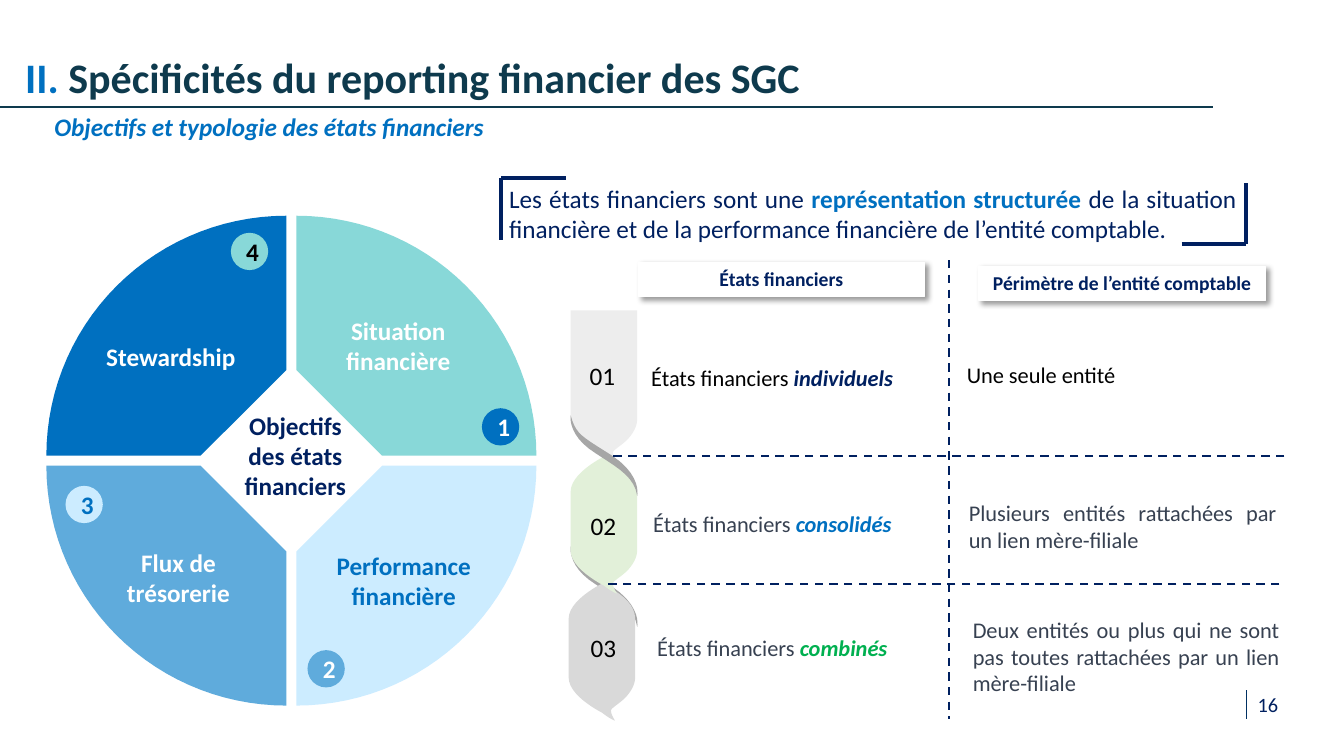
import math

from lxml import etree
from pptx import Presentation
from pptx.dml.color import RGBColor
from pptx.enum.dml import MSO_LINE
from pptx.enum.shapes import MSO_CONNECTOR, MSO_SHAPE
from pptx.enum.text import MSO_ANCHOR, MSO_AUTO_SIZE, PP_ALIGN
from pptx.oxml import parse_xml
from pptx.oxml.ns import qn
from pptx.util import Inches, Pt

LEFT, CENTER, JUSTIFY = PP_ALIGN.LEFT, PP_ALIGN.CENTER, PP_ALIGN.JUSTIFY
TOP, MIDDLE = MSO_ANCHOR.TOP, MSO_ANCHOR.MIDDLE
DASH = MSO_LINE.DASH
FONT = "Calibri"

WHITE = RGBColor(0xFF, 0xFF, 0xFF)
BLACK = RGBColor(0x00, 0x00, 0x00)
NAVY = RGBColor(0x00, 0x20, 0x60)
PAGE_RULE = RGBColor(0x00, 0x30, 0x62)
PETROL = RGBColor(0x0E, 0x3A, 0x4D)
BLUE = RGBColor(0x00, 0x70, 0xC0)
SKY = RGBColor(0x5F, 0xAB, 0xDC)
PALE_BLUE = RGBColor(0xCC, 0xEC, 0xFF)
TEAL = RGBColor(0x88, 0xD8, 0xD8)
SLATE = RGBColor(0x37, 0x41, 0x51)
GREEN = RGBColor(0x00, 0xB0, 0x50)
PALE_GREEN = RGBColor(0xE2, 0xF0, 0xD9)
LIGHT_GREY = RGBColor(0xED, 0xED, 0xED)
MID_GREY = RGBColor(0xD9, 0xD9, 0xD9)
FOLD_GREY = RGBColor(0xA6, 0xA6, 0xA6)

SHADOW = """<a:effectLst xmlns:a="http://schemas.openxmlformats.org/drawingml/2006/main">
<a:outerShdw blurRad="50800" dist="38100" dir="2700000" algn="tl" rotWithShape="0">
<a:srgbClr val="000000"><a:alpha val="40000"/></a:srgbClr></a:outerShdw></a:effectLst>"""


def write(holder, *spans, size=18, align=LEFT, anchor=TOP):
    """Fill a shape with one paragraph of (text, colour, style) spans; style holds b and/or i."""
    frame = holder.text_frame
    frame.word_wrap = True
    frame.vertical_anchor = anchor
    para = frame.paragraphs[0]
    para.alignment = align
    for text, color, style in spans:
        span = para.add_run()
        span.text = text
        span.font.name = FONT
        span.font.size = Pt(size)
        span.font.color.rgb = color
        span.font.bold = "b" in style
        span.font.italic = "i" in style
    return para


def add_outline(points, color):
    """Draw a closed, filled outline through points given in inches."""
    corners = [(Inches(x), Inches(y)) for x, y in points]
    builder = page.shapes.build_freeform(*corners[0])
    builder.add_line_segments(corners[1:], close=True)
    shape = builder.convert_to_shape()
    shape.shadow.inherit = False
    shape.fill.solid()
    shape.fill.fore_color.rgb = color
    shape.line.fill.background()


deck = Presentation()
deck.slide_width, deck.slide_height = Inches(13.33), Inches(7.5)
page = deck.slides.add_slide(deck.slide_layouts[5])

# Title
title = page.shapes.title
title.left, title.top, title.width, title.height = map(Inches, (0.15, 0.51, 11.5, 0.56))
title.text_frame.auto_size = MSO_AUTO_SIZE.NONE
heading = write(title, ("II. ", BLUE, "b"),
                ("Spécificités du reporting financier des SGC", PETROL, "b"),
                size=30, anchor=MIDDLE)
heading.line_spacing = 0.9

# Wheel of objectives
WHEEL_X, WHEEL_Y, HALF_GAP, RADIUS, HUB = 2.89, 4.57, 0.05, 2.38, 0.85
for side_x, side_y, color in [(1, -1, TEAL), (1, 1, PALE_BLUE), (-1, 1, SKY), (-1, -1, BLUE)]:
    corner_x = WHEEL_X + side_x * HALF_GAP
    corner_y = WHEEL_Y + side_y * HALF_GAP
    sector = [(corner_x + side_x * RADIUS * math.sin(math.radians(angle)),
               corner_y + side_y * RADIUS * math.cos(math.radians(angle)))
              for angle in range(0, 91, 3)]
    sector += [(corner_x + side_x * HUB, corner_y), (corner_x, corner_y + side_y * HUB)]
    add_outline(sector, color)

badges = [
    ("1", 4.78, 4.05, BLUE, WHITE),
    ("3", 0.65, 4.82, PALE_BLUE, BLUE),
    ("2", 3.05, 6.45, SKY, WHITE),
    ("4", 2.29, 2.31, TEAL, BLACK),
]
for number, left, top, color, ink in badges:
    badge = page.shapes.add_shape(MSO_SHAPE.OVAL, Inches(left), Inches(top),
                                  Inches(0.37), Inches(0.37))
    badge.shadow.inherit = False
    badge.fill.solid()
    badge.fill.fore_color.rgb = color
    badge.line.fill.background()
    write(badge, (number, ink, "b"), align=CENTER, anchor=MIDDLE)

# Numbered ribbon: curves as (control, control, end), straight edges as (end,)
TAIL = [((0, 0.14), (0.18, 0.27), (0.33, 0.35)), ((0.37, 0.38), (0.41, 0.41), (0.46, 0.43)),
        ((0.46, 0.43), (0.42, 0.37), (0.42, 0.33)), ((0.42, 0.3), (0.53, 0.25), (0.59, 0.17)),
        ((0.63, 0.12), (0.66, 0.06), (0.66, 0))]
FLAT_TOP = [((0.66, -1.08),), ((0, -1.08),)]
POINTED_TOP = [((0.66, -0.58),), ((0.66, -0.75), (0.47, -0.86), (0.33, -0.93)),
               ((0.18, -0.85), (0, -0.72), (0, -0.58))]
FOLD = [((0, 0), (-0.03, 0.17), (0.18, 0.33)), ((0.4, 0.49), (0.63, 0.58), (0.66, 0.8)),
        ((0.66, 0.8), (0.71, 0.6), (0.41, 0.4)), ((0.11, 0.21), (0.05, 0.19), (0, 0))]
CURVE_STEPS = 10
ribbon = [
    (5.66, 5.42, FOLD, FOLD_GREY),
    (5.66, 4.16, TAIL + FLAT_TOP, LIGHT_GREY),
    (5.64, 6.72, TAIL + POINTED_TOP, MID_GREY),
    (5.66, 5.46, TAIL + POINTED_TOP, PALE_GREEN),
    (5.66, 4.12, FOLD, FOLD_GREY),
]
for left, top, segments, color in ribbon:
    points = [(0, 0)]
    for segment in segments:
        if len(segment) == 1:
            points.append(segment[0])
            continue
        controls = (points[-1], *segment)
        for step in range(1, CURVE_STEPS + 1):
            t = step / CURVE_STEPS
            weights = ((1 - t) ** 3, 3 * t * (1 - t) ** 2, 3 * t ** 2 * (1 - t), t ** 3)
            points.append(tuple(sum(weight * control[axis]
                                    for weight, control in zip(weights, controls))
                                for axis in (0, 1)))
    add_outline([(left + x, top + y) for x, y in points], color)

# Column headers
for text, left, top in [("États financiers", 6.33, 2.6),
                        ("Périmètre de l’entité comptable", 9.71, 2.64)]:
    header = page.shapes.add_shape(MSO_SHAPE.RECTANGLE, Inches(left), Inches(top),
                                   Inches(2.84), Inches(0.34))
    header.fill.solid()
    header.fill.fore_color.rgb = WHITE
    header.line.color.rgb = WHITE
    header.line.width = Pt(0.75)
    header._element.spPr.append(parse_xml(SHADOW))
    write(header, (text, NAVY, "b"), size=14, align=CENTER)

# Rules, brackets and separators
rules = [
    (0, 1.06, 12.03, 1.06, PETROL, 1.5, None),
    (12.36, 6.85, 12.36, 7.13, PAGE_RULE, 0.5, None),
    (4.97, 1.77, 4.97, 2.38, NAVY, 3, None),
    (4.97, 1.77, 5.61, 1.77, NAVY, 3, None),
    (11.72, 2.42, 12.36, 2.42, NAVY, 3, None),
    (12.36, 1.82, 12.36, 2.42, NAVY, 3, None),
    (9.41, 2.58, 9.41, 7.13, NAVY, 1.5, DASH),
    (12.74, 4.52, 6.03, 4.52, NAVY, 1.5, DASH),
    (12.69, 5.79, 5.98, 5.79, NAVY, 1.5, DASH),
]
for *ends, color, weight, dash in rules:
    rule = page.shapes.add_connector(MSO_CONNECTOR.STRAIGHT, *map(Inches, ends))
    rule.line.color.rgb = color
    rule.line.width = Pt(weight)
    if dash:
        rule.line.dash_style = dash
    etree.SubElement(rule._element.spPr, qn("a:effectLst"))

# Text: left, top, width, height, size, alignment, spans
KIND = "États financiers "
texts = [
    (0.44, 1.06, 10.25, 0.4, 18, JUSTIFY,
     [("Objectifs et typologie des états financiers", BLUE, "bi")]),
    (4.95, 1.77, 7.41, 0.71, 18, JUSTIFY,
     [("Les états financiers sont une ", NAVY, ""), ("représentation structurée ", BLUE, "b"),
      ("de la situation financière et de la performance financière de l’entité comptable.",
       NAVY, "")]),
    (3.27, 3.08, 1.36, 0.71, 18, CENTER, [("Situation financière", WHITE, "b")]),
    (3.21, 5.41, 1.59, 0.71, 18, CENTER, [("Performance financière", BLUE, "b")]),
    (1.09, 5.38, 1.36, 0.71, 18, CENTER, [("Flux de trésorerie", WHITE, "b")]),
    (0.91, 3.34, 1.57, 0.4, 18, CENTER, [("Stewardship", WHITE, "b")]),
    (2.2, 4.02, 1.46, 1.01, 18, CENTER, [("Objectifs des états financiers", NAVY, "b")]),
    (5.75, 3.53, 0.53, 0.4, 18, LEFT, [("01", BLACK, "")]),
    (5.76, 5.01, 0.53, 0.4, 18, LEFT, [("02", BLACK, "")]),
    (5.76, 6.22, 0.53, 0.4, 18, LEFT, [("03", BLACK, "")]),
    (6.36, 3.56, 3.29, 0.37, 16, JUSTIFY, [(KIND, BLACK, ""), ("individuels", NAVY, "bi")]),
    (6.38, 5.01, 3.25, 0.37, 16, JUSTIFY, [(KIND, SLATE, ""), ("consolidés", BLUE, "bi")]),
    (6.42, 6.24, 3.24, 0.37, 16, JUSTIFY, [(KIND, SLATE, ""), ("combinés", GREEN, "bi")]),
    (9.49, 3.53, 3.29, 0.37, 16, JUSTIFY, [("Une seule entité", BLACK, "")]),
    (9.51, 4.9, 3.25, 0.64, 16, JUSTIFY,
     [("Plusieurs entités rattachées par un lien mère-filiale", SLATE, "")]),
    (9.55, 6.06, 3.24, 0.91, 16, JUSTIFY,
     [("Deux entités ou plus qui ne sont pas toutes rattachées par un lien mère-filiale",
       SLATE, "")]),
    (12.05, 6.82, 1.05, 0.31, 14.5, CENTER, [("16", NAVY, "")]),
]
for *place, size, align, spans in texts:
    box = page.shapes.add_textbox(*map(Inches, place))
    write(box, *spans, size=size, align=align)

deck.save("out.pptx")
